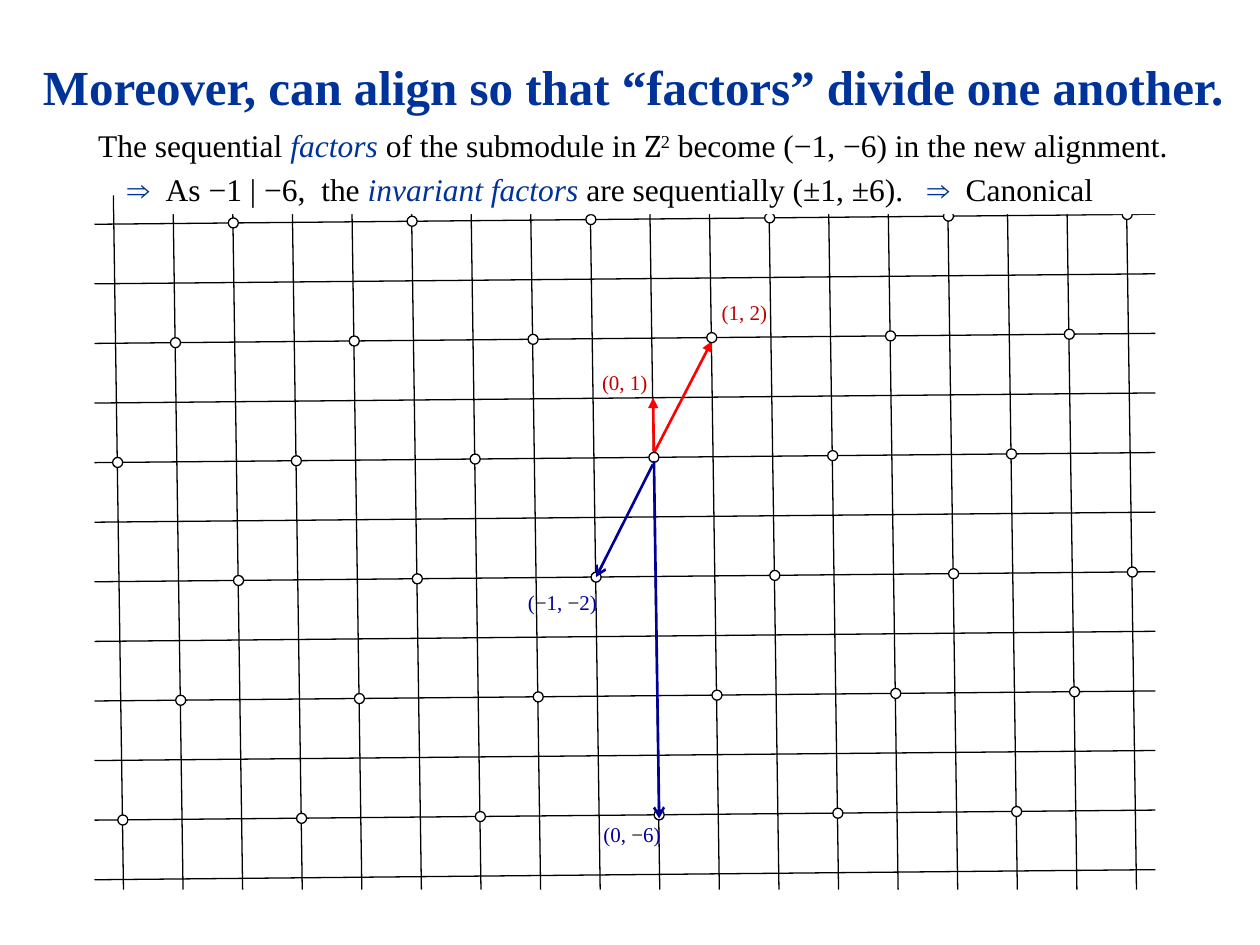
import pptx
import pptx.util
import pptx.dml.color
import pptx.enum.shapes
import pptx.enum.text
import pptx.oxml
import pptx.oxml.ns
import lxml.etree

COLORS = {"black": "000000", "white": "FFFFFF", "blue": "003399",
          "navy": "000099", "red": "FF0000", "crimson": "C00000"}
FONT = "Times New Roman"
LEFT, RIGHT, TOP, BOTTOM = 0.75, 9.17, 1.55, 7.06
COLUMNS, ROWS = 18, 12
FIRST_COLUMN, FIRST_ROW = 0.9, 1.78
PITCH = (8.94 - FIRST_COLUMN) / (COLUMNS - 1)
TILT = 0.08
ORIGIN = (5.19, 3.63)
DOT = 0.08

inch = pptx.util.Inches
qn = pptx.oxml.ns.qn


def rgb(name):
    return pptx.dml.color.RGBColor.from_string(COLORS[name])


def node(a, b):
    x = ORIGIN[0] + PITCH * (a - b * TILT / (BOTTOM - TOP))
    y = ORIGIN[1] - PITCH * (b + a * TILT / (RIGHT - LEFT))
    return x, y


def add_line(s, start, end, color="black", width=0.75, head=None):
    line = s.shapes.add_connector(pptx.enum.shapes.MSO_CONNECTOR.STRAIGHT,
                                  *map(inch, start + end))
    line.line.color.rgb = rgb(color)
    line.line.width = pptx.util.Pt(width)
    if head:
        ln = line.line._get_or_add_ln()
        lxml.etree.SubElement(ln, qn("a:tailEnd"), type=head)
    lxml.etree.SubElement(line.element.spPr, qn("a:effectLst"))


def add_vector(s, start, end, color, head):
    add_line(s, node(*start), node(*end), color, 1.5, head)


def add_grid(s):
    for row in range(ROWS):
        y = FIRST_ROW + row * PITCH
        add_line(s, (LEFT, y), (RIGHT, y - TILT))
    for column in range(COLUMNS):
        x = FIRST_COLUMN + column * PITCH
        add_line(s, (x, TOP), (x + TILT, BOTTOM))


def add_dot(s, a, b):
    x, y = node(a, b)
    sp = s.shapes.add_shape(pptx.enum.shapes.MSO_SHAPE.OVAL, inch(x - DOT / 2),
                            inch(y - DOT / 2), inch(DOT), inch(DOT))
    sp.shadow.inherit = False
    sp.fill.solid()
    sp.fill.fore_color.rgb = rgb("white")
    sp.line.color.rgb = rgb("black")
    sp.line.width = pptx.util.Pt(0.75)


def add_submodule(s):
    for b in range(4, -7, -2):
        for a in range(-9, 9):
            if (a - b // 2) % 3 == 0:
                add_dot(s, a, b)


def add_run(p, text, size, color="black", bold=False, italic=False,
            font=FONT, raised=False):
    r = p.add_run()
    r.text = text
    r.font.name = font
    r.font.size = pptx.util.Pt(size)
    r.font.bold = bold
    r.font.italic = italic
    r.font.color.rgb = rgb(color)
    if raised:
        r.font._element.set("baseline", "30000")
    return r


def add_gap(p, size, extra):
    r = add_run(p, " ", size)
    r.font._element.set("spc", str(int(extra * 100)))


def add_label(s, x, y, width, color, *texts):
    sp = s.shapes.add_textbox(inch(x), inch(y), inch(width), inch(0.3))
    sp.text_frame.word_wrap = True
    for text in texts:
        add_run(sp.text_frame.paragraphs[0], text, 12,
                "black" if text == "−" else color)


def place_text(s, sp, x, y, width, height, alpha=None):
    sp.left, sp.top, sp.width, sp.height = map(inch, (x, y, width, height))
    sp.fill.solid()
    sp.fill.fore_color.rgb = rgb("white")
    if alpha:
        color = sp.element.spPr.find(".//" + qn("a:srgbClr"))
        lxml.etree.SubElement(color, qn("a:alpha"), val=str(alpha * 1000))
    s.shapes.element.append(sp.element)
    tf = sp.text_frame
    tf.word_wrap = True
    tf.auto_size = pptx.enum.text.MSO_AUTO_SIZE.NONE
    tf.vertical_anchor = pptx.enum.text.MSO_ANCHOR.TOP
    return tf


def clear_bullet(p):
    pPr = p._p.get_or_add_pPr()
    pPr.set("marL", "0")
    pPr.set("indent", "0")
    lxml.etree.SubElement(pPr, qn("a:buNone"))


def add_conclusion(s):
    tf = place_text(s, s.placeholders[1], 0.91, 1.3, 8.7, 0.4)
    p = tf.paragraphs[0]
    p.space_before = pptx.util.Pt(0)
    clear_bullet(p)
    add_run(p, "⇒", 18, "blue", bold=True)
    add_gap(p, 18, 4.5)
    add_run(p, "As −1 | −6,", 18)
    add_gap(p, 18, 4.5)
    add_run(p, "the ", 18)
    add_run(p, "invariant factors ", 18, "blue", italic=True)
    add_run(p, "are sequentially (±1, ±6).", 18)
    add_gap(p, 18, 9)
    add_run(p, "⇒", 18, "blue", bold=True)
    add_gap(p, 18, 4.5)
    add_run(p, "Canonical", 18)


def add_heading(s):
    tf = place_text(s, s.shapes.title, 0.2, 0.4, 9.65, 0.96, alpha=50)
    p = tf.paragraphs[0]
    p.alignment = pptx.enum.text.PP_ALIGN.CENTER
    add_run(p, "Moreover, can align so that “factors” divide one another.",
            28, "blue", bold=True)
    p = tf.add_paragraph()
    p.alignment = pptx.enum.text.PP_ALIGN.CENTER
    p.space_before = pptx.util.Pt(6)
    add_run(p, "The sequential ", 18)
    add_run(p, "factors", 18, "blue", italic=True)
    add_run(p, " of the submodule in ", 18)
    add_run(p, "Z", 18, font="Cambria")
    add_run(p, "2", 18, raised=True)
    add_run(p, " become (−1, −6) in the new alignment.", 18)


def main():
    prs = pptx.Presentation()
    prs.slide_width, prs.slide_height = inch(10), inch(7.5)
    s = prs.slides.add_slide(prs.slide_layouts[1])
    add_grid(s)
    add_vector(s, (0, 0.07), (1, 1.94), "red", "triangle")
    add_submodule(s)
    add_vector(s, (0, -0.06), (0, -6.06), "navy", "arrow")
    add_vector(s, (-0.02, -0.12), (-1, -2), "navy", "arrow")
    add_vector(s, (0, 0.1), (0, 1), "red", "triangle")
    add_label(s, 5.63, 2.33, 0.63, "crimson", "(1, 2)")
    add_label(s, 4.68, 2.88, 0.63, "crimson", "(0, 1)")
    add_label(s, 4.69, 6.47, 0.71, "navy", "(0, ", "−", "6)")
    add_label(s, 4.09, 4.63, 0.79, "navy", "(", "−", "1, ", "−", "2)")
    add_conclusion(s)
    add_heading(s)
    prs.save("out.pptx")


if __name__ == "__main__":
    main()
